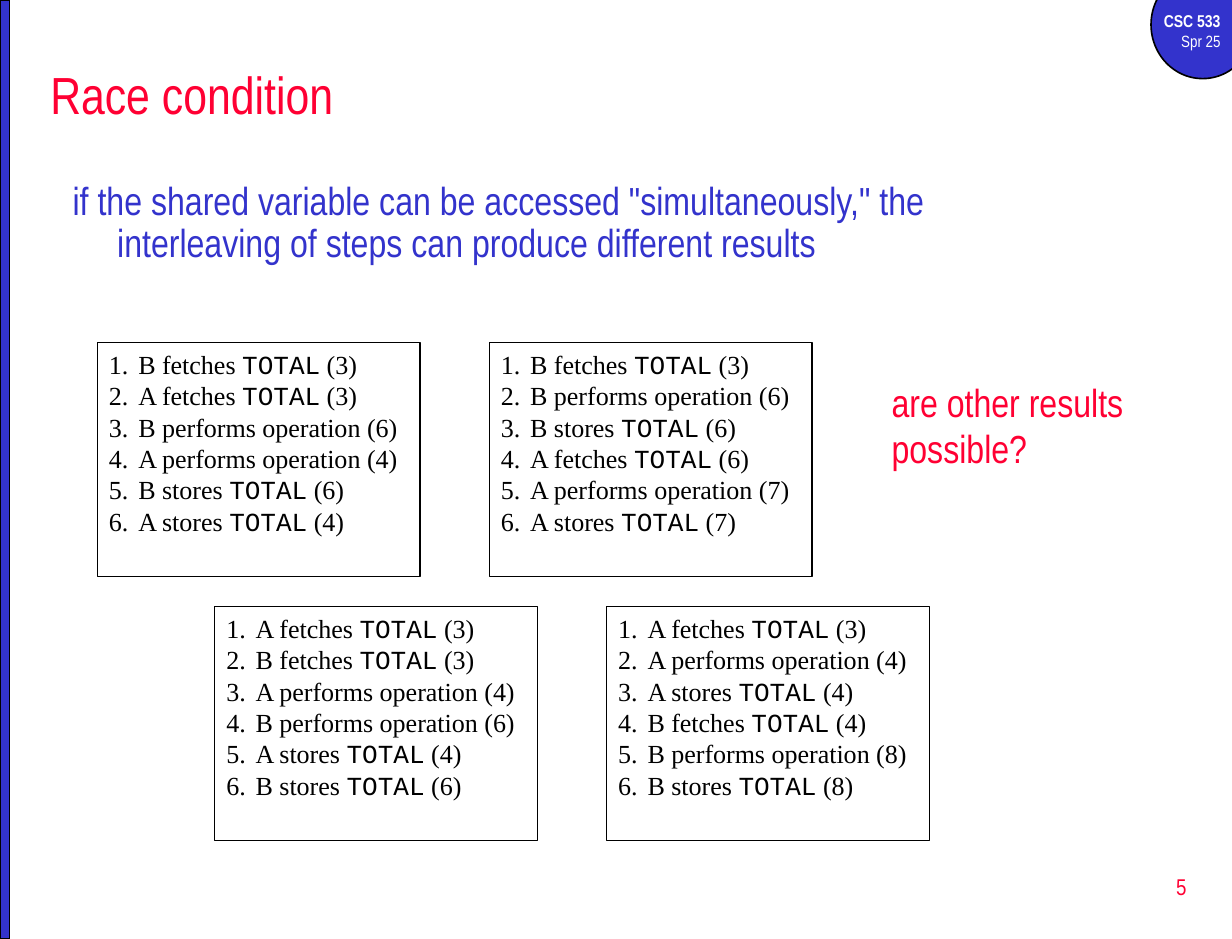
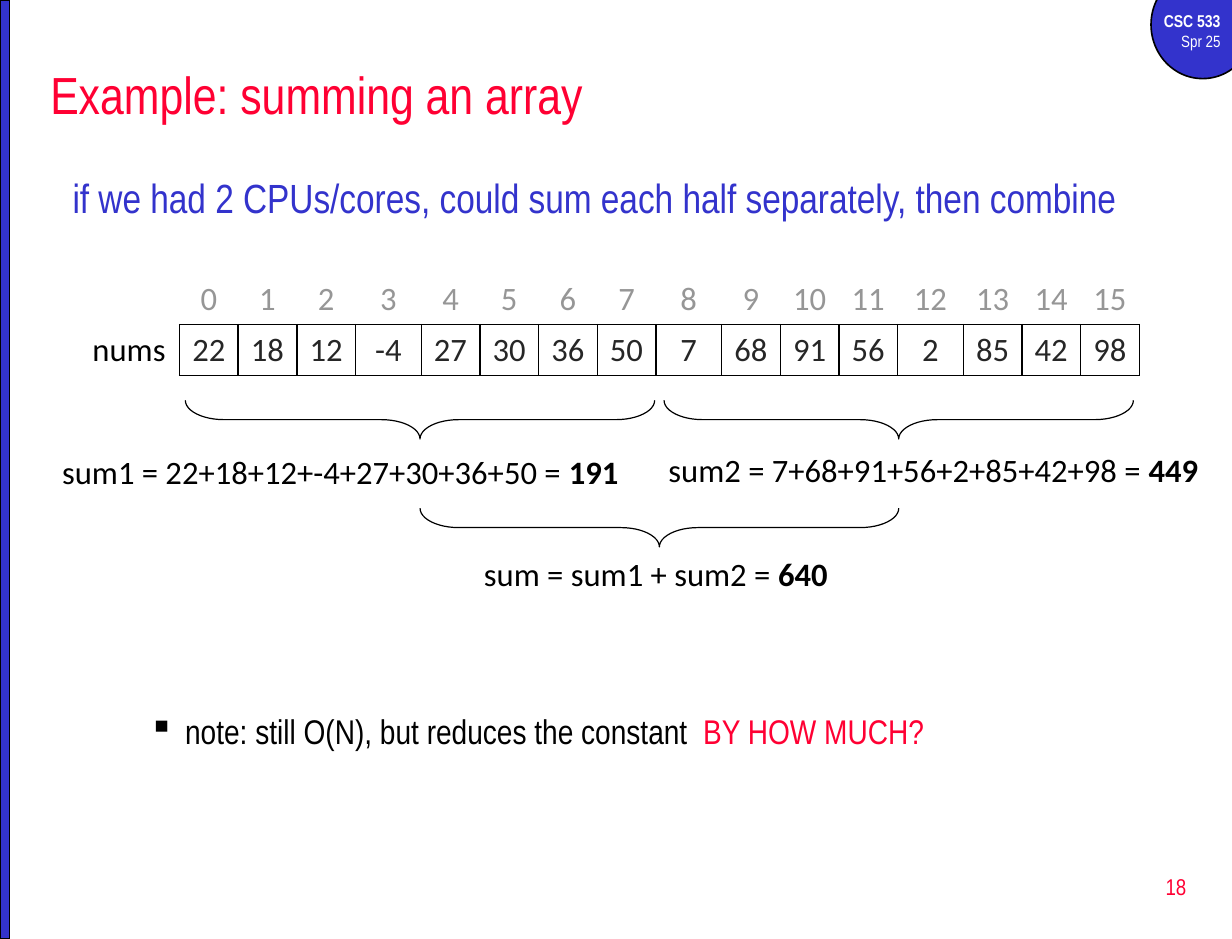
import pptx
import pptx.util
import pptx.dml.color
import pptx.enum.shapes
import pptx.enum.text
import pptx.oxml
import pptx.oxml.ns

Inches, Pt = pptx.util.Inches, pptx.util.Pt
Kind = pptx.enum.shapes.MSO_SHAPE
Align = pptx.enum.text.PP_ALIGN
Anchor = pptx.enum.text.MSO_ANCHOR

HUES = {"blue": "3333CC", "red": "FF0033", "black": "000000",
        "white": "FFFFFF", "grey": "969696", "dark": "262626"}
NARROW, SERIF, MONO, SANS = "Arial Narrow", "Times New Roman", "Courier New", "Calibri"


def hue(name):
    return pptx.dml.color.RGBColor.from_string(HUES[name])


def tag(text):
    """Parse one drawing element, declaring its namespace."""
    space = pptx.oxml.ns.nsdecls("a")
    head, sep, tail = text.partition(" ")
    return pptx.oxml.parse_xml(f"{head} {space}{sep}{tail}")


def write(para, text, size, color="black", font=NARROW, bold=False):
    run = para.add_run()
    run.text = text
    run.font.size = Pt(size)
    run.font.name = font
    run.font.bold = bold
    run.font.color.rgb = hue(color)


def indent(para, left, hang, bullet=None):
    props = para._p.get_or_add_pPr()
    props.set("marL", str(Inches(left)))
    props.set("indent", str(-Inches(hang)))
    if bullet:
        props.append(tag(bullet))


def label(shapes, box, wrap=True, align=Align.LEFT, anchor=Anchor.TOP):
    """Add an empty text box; return its frame and first paragraph."""
    frame = shapes.add_textbox(*map(Inches, box)).text_frame
    frame.word_wrap = wrap
    frame.vertical_anchor = anchor
    para = frame.paragraphs[0]
    para.alignment = align
    return frame, para


def outline(shapes, kind, box, fill=None, width=0.75):
    shape = shapes.add_shape(kind, *map(Inches, box))
    shape.shadow.inherit = False
    if fill:
        shape.fill.solid()
        shape.fill.fore_color.rgb = hue(fill)
    else:
        shape.fill.background()
    shape.line.color.rgb = hue("black")
    shape.line.width = Pt(width)
    return shape


def base(deck, title, number):
    """Add a slide with the course badge, side bar, title and page number."""
    shapes = deck.slides.add_slide(deck.slide_layouts[6]).shapes
    outline(shapes, Kind.OVAL, (9.81, -0.25, 0.88, 0.92), "blue", 1)
    frame, para = label(shapes, (9.67, 0.04, 0.83, 0.46), align=Align.RIGHT)
    write(para, "CSC 533", 10.5, "white", bold=True)
    para = frame.add_paragraph()
    para.alignment = Align.RIGHT
    write(para, "Spr 25", 10, "white")
    outline(shapes, Kind.RECTANGLE, (0, 0, 0.08, 8), "blue", 1)
    para = label(shapes, (0.33, 0.42, 9.92, 0.75), anchor=Anchor.MIDDLE)[1]
    write(para, title, 32, "red")
    para = label(shapes, (8.02, 7.29, 2.19, 0.53), False, Align.RIGHT, Anchor.MIDDLE)[1]
    write(para, str(number), 14, "red")
    return shapes


def body(shapes, box, text, size, spacing=1.0):
    para = label(shapes, box)[1]
    para.line_spacing = spacing
    para.space_before = Pt(size * 0.2)
    indent(para, 0.38, 0.38)
    write(para, text, size, "blue")


def steps(order):
    """Yield the steps when A adds 1 to TOTAL and B doubles it, in the given order."""
    total, held, stage = 3, {}, {"A": 0, "B": 0}
    for who in order:
        verb = ("fetches ", "performs operation", "stores ")[stage[who]]
        if stage[who] == 0:
            held[who] = total
        elif stage[who] == 1:
            held[who] = held[who] + 1 if who == "A" else held[who] * 2
        else:
            total = held[who]
        yield f"{who} {verb}", stage[who] != 1, f" ({held[who]})"
        stage[who] += 1


def trace(shapes, box, order):
    frame = outline(shapes, Kind.RECTANGLE, box).text_frame
    frame.word_wrap = True
    frame.vertical_anchor = Anchor.TOP
    for i, (act, shared, value) in enumerate(steps(order)):
        para = frame.add_paragraph() if i else frame.paragraphs[0]
        para.alignment = Align.LEFT
        indent(para, 0.25, 0.25, '<a:buAutoNum type="arabicPeriod"/>')
        if shared:
            write(para, act, 16, font=SERIF)
            write(para, "TOTAL", 16, font=MONO)
            write(para, value, 16, font=SERIF)
        else:
            write(para, act + value, 16, font=SERIF)


def race(deck):
    shapes = base(deck, "Race condition", 5)
    body(shapes, (0.52, 1.5, 8.49, 0.98),
         'if the shared variable can be accessed "simultaneously," the '
         "interleaving of steps can produce different results", 24, 0.9)
    rows = [(0.83, 2.92, ("BABABA", "BBBAAA")), (1.83, 5.17, ("ABABAB", "AAABBB"))]
    for left, top, orders in rows:
        for i, order in enumerate(orders):
            trace(shapes, (left + i * 3.34, top, 2.75, 1.99), order)
    para = label(shapes, (7.5, 3.17, 2.42, 0.91))[1]
    write(para, "are other results possible?", 24, "red")


def edge(cell, sides):
    """Rule the named sides of a cell (from LRTB) and clear the others."""
    props = cell._tc.get_or_add_tcPr()
    for side in "LRTB":
        paint = (f'<a:solidFill><a:srgbClr val="{HUES["black"]}"/></a:solidFill>'
                 if side in sides else "<a:noFill/>")
        props.append(tag(f'<a:ln{side} w="{Pt(1)}">{paint}</a:ln{side}>'))
    cell.fill.background()


def array(shapes, box, nums):
    """Draw the indexes above the values of an array."""
    grid = shapes.add_table(2, len(nums) + 1, *map(Inches, box)).table
    grid.first_row = grid.horz_banding = False
    for row in grid.rows:
        row.height = Inches(box[3] / 2)
    for i, col in enumerate(grid.columns):
        col.width = Inches(0.86 if i == 0 else 0.56 if i in (4, 9, 13) else 0.5)
    texts = [["", *range(len(nums))], ["nums", *nums]]
    for r, line in enumerate(texts):
        for c, text in enumerate(line):
            cell = grid.cell(r, c)
            if c == 0:
                edge(cell, "R" if r else "")
            else:
                edge(cell, "LRTB" if r else "B")
            para = cell.text_frame.paragraphs[0]
            para.alignment = Align.CENTER
            para.space_before = Pt(4)
            if text != "":
                color = "grey" if r == 0 else "dark" if c else "black"
                write(para, str(text), 20, color, SANS)


def brace(shapes, left, top, width, height=0.33):
    """Draw a brace that opens upward and fills the given box."""
    box = (left + (width - height) / 2, top + (height - width) / 2, height, width)
    shape = outline(shapes, Kind.LEFT_BRACE, box)
    shape.rotation = 270
    shape.adjustments[0] = 1
    shape.adjustments[1] = 0.5


def total(shapes, box, text, value):
    para = label(shapes, box, False, Align.CENTER)[1]
    write(para, text, 20, font=SANS)
    write(para, str(value), 20, font=SANS, bold=True)


def summing(deck):
    shapes = base(deck, "Example: summing an array", 18)
    body(shapes, (0.52, 1.42, 9.56, 3.92),
         "if we had 2 CPUs/cores, could sum each half separately, then combine", 25)
    nums = [22, 18, 12, -4, 27, 30, 36, 50, 7, 68, 91, 56, 2, 85, 42, 98]
    array(shapes, (0.67, 2.33, 9.07, 0.87), nums)

    halves = shapes.add_group_shape().shapes
    boxes = [(0.41, 3.8, 4.98, 0.44), (5.58, 3.78, 4.75, 0.44)]
    for i, box in enumerate(boxes):
        part = nums[i * 8:i * 8 + 8]
        brace(halves, 1.58 + i * 4.08, 3.41, 4)
        total(halves, box, f"sum{i + 1} = {'+'.join(map(str, part))} = ", sum(part))

    whole = shapes.add_group_shape().shapes
    brace(whole, 3.58, 4.33, 4.08)
    total(whole, (4.01, 4.67, 3.16, 0.44), "sum = sum1 + sum2 = ", sum(nums))

    para = label(shapes, (0.67, 6, 9.56, 1.25))[1]
    para.space_before = Pt(4.2)
    indent(para, 0.81, 0.31, '<a:buChar char="▪"/>')
    write(para, "note: still O(N), but reduces the constant  ", 21)
    write(para, "BY HOW MUCH?", 21, "red")


def main():
    deck = pptx.Presentation()
    deck.slide_width, deck.slide_height = Inches(10.5), Inches(8)
    race(deck)
    summing(deck)
    deck.save("out.pptx")


if __name__ == "__main__":
    main()
